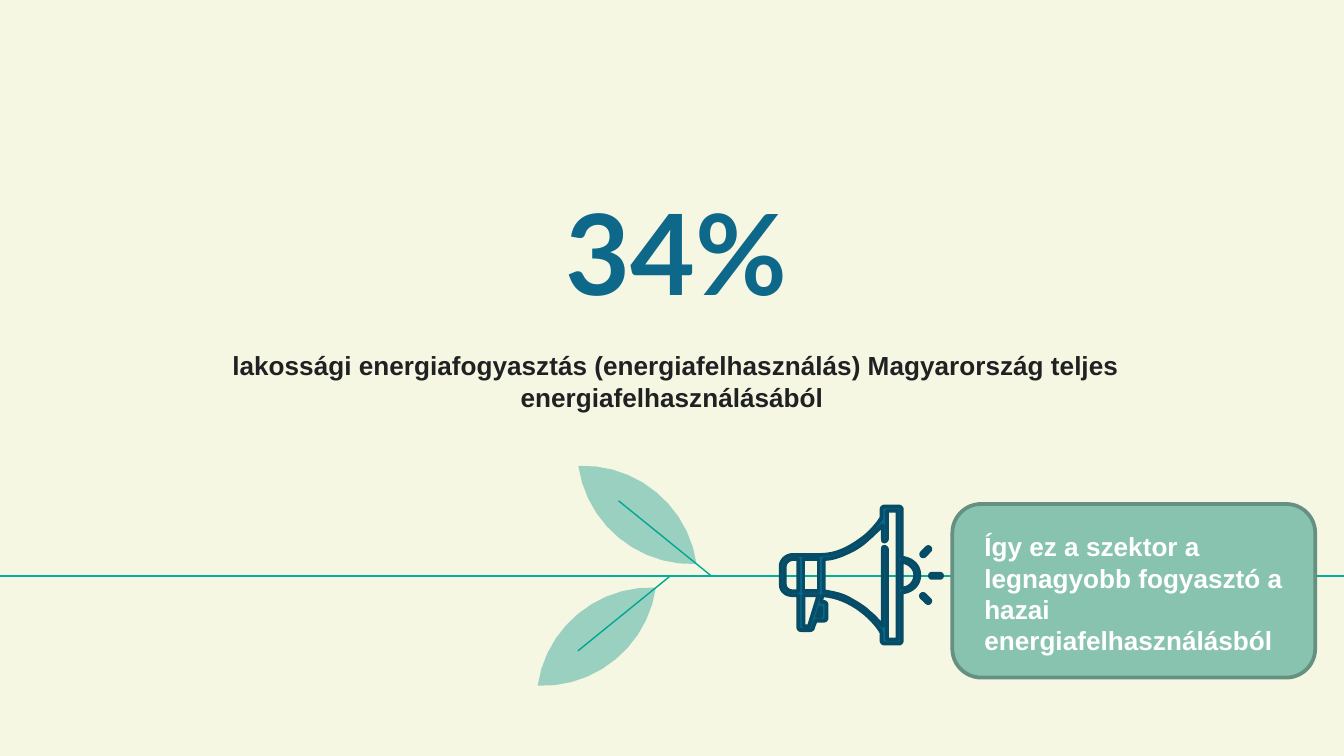
from math import atan2, cos, pi, sin
from lxml import etree
from pptx import Presentation
from pptx.dml.color import RGBColor
from pptx.enum.shapes import MSO_CONNECTOR, MSO_SHAPE
from pptx.enum.text import MSO_ANCHOR, PP_ALIGN
from pptx.oxml.ns import qn
from pptx.util import Pt

LINE = MSO_CONNECTOR.STRAIGHT
ROUND = MSO_SHAPE.ROUNDED_RECTANGLE
TOP, MIDDLE = MSO_ANCHOR.TOP, MSO_ANCHOR.MIDDLE
LEFT, CENTER = PP_ALIGN.LEFT, PP_ALIGN.CENTER

CREAM = RGBColor(0xF6, 0xF7, 0xE3)
LEAF = RGBColor(0x9A, 0xD0, 0xC0)
VEIN = RGBColor(0x00, 0xA6, 0x93)
STEM = RGBColor(0x01, 0xAF, 0x9B)
BLUE = RGBColor(0x0D, 0x68, 0x89)
TEAL = RGBColor(0x0A, 0x67, 0x87)
INK = RGBColor(0x20, 0x21, 0x22)
WHITE = RGBColor(0xFF, 0xFF, 0xFF)
SAGE = RGBColor(0x88, 0xC3, 0xB0)
MOSS = RGBColor(0x65, 0x90, 0x82)
HORN = RGBColor(0x09, 0x67, 0x8A)
NAVY = RGBColor(0x07, 0x4C, 0x66)

WIDE, HIGH = 720, 405

# Contours in points: a pair is a corner, six numbers are a cubic curve.
DOME = [(64.8, 29.5), (69.1, 30.2, 72, 33.1, 72, 36.7),
        (72, 40.3, 69.1, 43.9, 64.8, 43.9)]
GRIP = [(9.4, 28.1), (9.4, 45.4), (6.5, 45.4),
        (4.3, 45.4, 2.2, 43.9, 2.2, 41.8), (2.2, 31.7),
        (2.2, 30.2, 4.3, 28.1, 6.5, 28.1)]
BAND = [(20.2, 28.1), (20.2, 45.4), (12.2, 45.4), (12.2, 28.1)]
LATCH = [(21.6, 54), (21.6, 59), (19.4, 59), (20.9, 54)]
HANDLE = [(20.2, 47.5), (15.1, 64.1), (12.2, 64.1), (12.2, 47.5)]
BELL = [(62.6, 2.2), (62.6, 71.3), (56.9, 71.3), (56.9, 23),
        (56.9, 22.3, 56.2, 21.6, 55.4, 21.6),
        (54.7, 21.6, 54.7, 22.3, 54.7, 23), (54.7, 64.1),
        (52.6, 61.9, 50.4, 59, 46.8, 56.2),
        (43.9, 53.3, 39.6, 51.1, 36, 49),
        (31.7, 46.8, 27.4, 46.1, 23, 45.4), (23, 28.1),
        (27.4, 28.1, 31.7, 26.6, 36, 24.5),
        (39.6, 23, 43.9, 20.2, 46.8, 17.3),
        (50.4, 14.4, 52.6, 11.5, 54.7, 10.1), (54.7, 17.3),
        (54.7, 18, 54.7, 18.7, 55.4, 18.7),
        (56.2, 18.7, 56.9, 18, 56.9, 17.3), (56.9, 2.2)]
RIM = [(55.4, 0), (54.7, 0, 54, 0.7, 54, 1.4), (54, 5.8),
       (53.3, 7.2, 50.4, 11.5, 45.4, 15.8),
       (39.6, 20.2, 31.7, 25.9, 21.6, 25.9), (6.5, 25.9),
       (2.9, 25.9, 0, 28.8, 0, 31.7), (0, 41.8),
       (0, 45.4, 2.9, 47.5, 6.5, 47.5), (9.4, 47.5), (9.4, 64.8),
       (9.4, 65.5, 10.1, 66.2, 10.8, 66.2), (15.8, 66.2),
       (16.6, 66.2, 17.3, 65.5, 17.3, 64.8), (18.7, 61.2), (23, 61.2),
       (23.8, 61.2, 24.5, 60.5, 24.5, 59.8), (24.5, 52.6),
       (24.5, 51.8, 23.8, 51.1, 23, 51.1), (21.6, 51.1), (22.3, 47.5),
       (32.4, 48.2, 40.3, 53.3, 45.4, 57.6),
       (50.4, 61.9, 53.3, 66.2, 54, 67.7), (54, 72),
       (54, 72.7, 54.7, 73.4, 55.4, 73.4), (63.4, 73.4),
       (64.1, 73.4, 64.8, 72.7, 64.8, 72), (64.8, 46.1),
       (70.6, 45.4, 74.2, 41.8, 74.2, 36.7),
       (74.2, 31.7, 70.6, 28.1, 64.8, 27.4), (64.8, 1.4),
       (64.8, 0.7, 64.1, 0, 63.4, 0)]
RAYS = [(81, 37.1, 85.3, 37.1), (76.3, 25.6, 79, 22.8),
        (76.2, 47.9, 79, 50.6)]


def trace(parts, steps=10):
    """Turn a contour's corners and curves into a list of points."""
    pts = []
    for part in parts:
        if len(part) == 2:
            pts.append(part)
            continue
        knots = [pts[-1], part[:2], part[2:4], part[4:]]
        for i in range(1, steps + 1):
            t = i / steps
            mix = ((1 - t) ** 3, 3 * t * (1 - t) ** 2, 3 * t * t * (1 - t), t ** 3)
            pts.append(tuple(sum(m * k[a] for m, k in zip(mix, knots))
                             for a in (0, 1)))
    return pts


def outline(slide, x, y, rings, fill, edge=None):
    """Draw closed contours as one shape, with holes where they nest."""
    rings = [[(Pt(x + a), Pt(y + b)) for a, b in trace(r)] for r in rings]
    pen = slide.shapes.build_freeform(*rings[0][0])
    for i, ring in enumerate(rings):
        if i:
            pen.move_to(*ring[0])
        pen.add_line_segments(ring[1:], close=True)
    paint(pen.convert_to_shape(), fill, edge)


def paint(shape, fill, edge=None):
    shape.shadow.inherit = False
    shape.fill.solid()
    shape.fill.fore_color.rgb = fill
    if edge is None:
        shape.line.fill.background()
    else:
        shape.line.color.rgb = edge
        shape.line.width = Pt(2)


def rule(slide, x1, y1, x2, y2, color):
    line = slide.shapes.add_connector(LINE, Pt(x1), Pt(y1), Pt(x2), Pt(y2))
    line.line.color.rgb = color
    line.line.width = Pt(0.75)
    etree.SubElement(line._element.spPr, qn("a:effectLst"))


def text(slide, x, y, w, h, runs, align=LEFT, anchor=TOP, pad=(0, 0), before=0):
    """Each run is (words, size, font, color, bold)."""
    frame = slide.shapes.add_textbox(Pt(x), Pt(y), Pt(w), Pt(h)).text_frame
    frame.word_wrap = True
    frame.vertical_anchor = anchor
    frame.margin_left = frame.margin_right = Pt(pad[0])
    frame.margin_top = frame.margin_bottom = Pt(pad[1])
    para = frame.paragraphs[0]
    para.alignment = align
    para.space_before = Pt(before)
    for words, size, face, color, bold in runs:
        run = para.add_run()
        run.text = words
        font = run.font
        font.size, font.name, font.bold = Pt(size), face, bold
        font.color.rgb = color


def leaf(slide, x, y, way):
    """Draw a leaf from its tip; way is 1 for downward, -1 for upward."""
    w, h = 63.4, 52.6 * way
    near, far, bulge = 0.284, 0.716, 0.256

    def arc(a, b, side):
        bend = bulge * side
        return (a * w + bend * h, a * h - bend * w,
                b * w + bend * h, b * h - bend * w)

    ring = [(0, 0), arc(near, far, 1) + (w, h), arc(far, near, -1) + (0, 0)]
    outline(slide, x, y, [ring], LEAF)
    rule(slide, x + 71.3, y + 59 * way, x + 21.6, y + 18.7 * way, VEIN)


def figure(slide, x, y, w):
    text(slide, x, y, w, 154.8, [("34%", 60, "Lato", BLUE, True)],
         CENTER, MIDDLE, (7.2, 7.2))
    words = ("lakossági energiafogyasztás (energiafelhasználás) "
             "Magyarország teljes energiafelhasználásából")
    text(slide, x - 2.4, y + 128.2, w, 27.4,
         [(" ", 16, "Lato", TEAL, False), (words, 14, "Arial", INK, True)],
         CENTER, before=2)


def callout(slide, x, y, w, h):
    paint(slide.shapes.add_shape(ROUND, Pt(x), Pt(y), Pt(w), Pt(h)), SAGE, MOSS)
    words = ("Így ez a szektor a legnagyobb fogyasztó a hazai "
             "energiafelhasználásból")
    text(slide, x + 10, y + 10.8, w - 10.8, h - 18,
         [(words, 14, "Arial", WHITE, True)], pad=(7.2, 3.6))


def horn(slide, x, y):
    outline(slide, x, y, [DOME, GRIP, BAND, LATCH, HANDLE, BELL, RIM], HORN, NAVY)
    for x1, y1, x2, y2 in RAYS:
        turn = atan2(y2 - y1, x2 - x1)
        ring = []
        for cx, cy, start in ((x2, y2, turn - pi / 2), (x1, y1, turn + pi / 2)):
            ring += [(cx + 1.1 * cos(start + pi * i / 8),
                      cy + 1.1 * sin(start + pi * i / 8)) for i in range(9)]
        outline(slide, x, y, [ring], HORN, NAVY)


def main():
    deck = Presentation()
    deck.slide_width, deck.slide_height = Pt(WIDE), Pt(HIGH)
    slide = deck.slides.add_slide(deck.slide_layouts[6])
    slide.background.fill.solid()
    slide.background.fill.fore_color.rgb = CREAM
    leaf(slide, 309.8, 249.6, 1)
    leaf(slide, 288, 367.4, -1)
    rule(slide, 0, 308.6, WIDE, 308.6, STEM)
    figure(slide, 58.2, 56.8, 608.4)
    callout(slide, 510.2, 270, 194.4, 93)
    horn(slide, 418.3, 271.4)
    deck.save("out.pptx")


if __name__ == "__main__":
    main()
